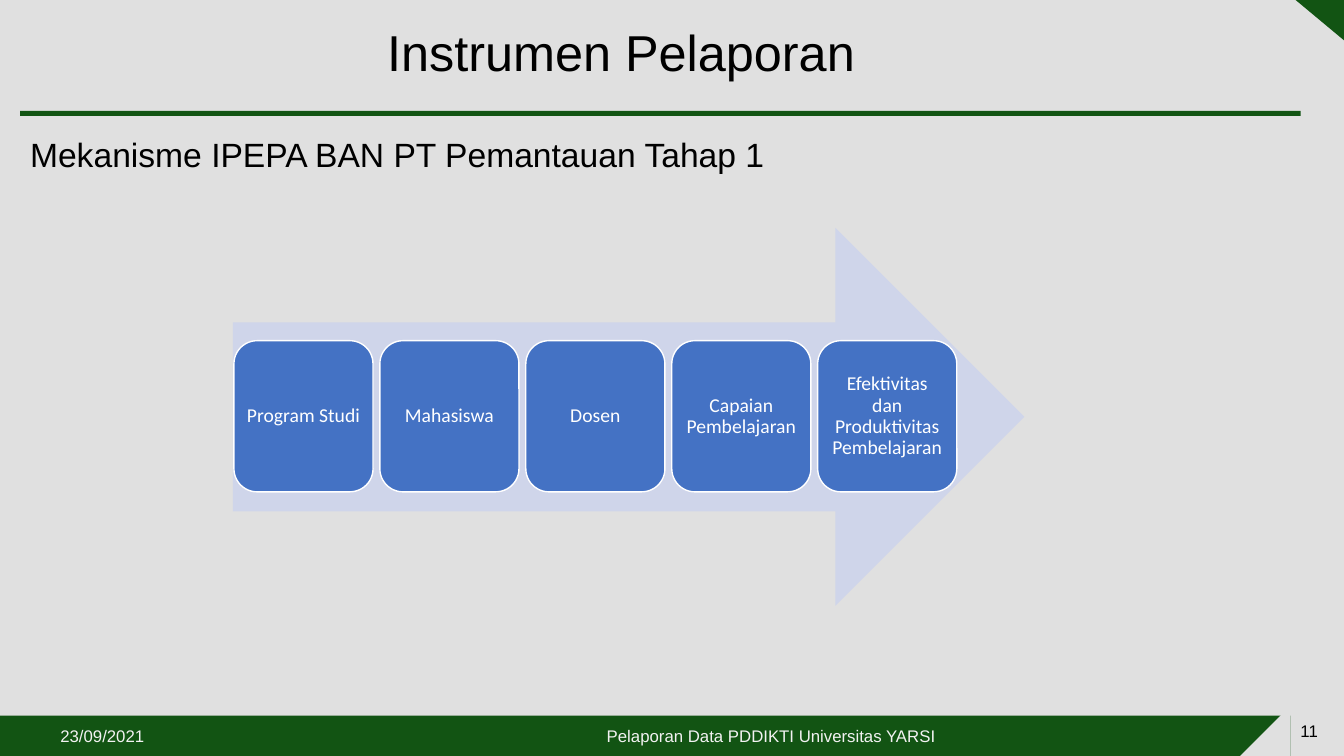
from pptx import Presentation
from pptx.dml.color import RGBColor
from pptx.enum.shapes import MSO_SHAPE
from pptx.enum.text import MSO_ANCHOR, PP_ALIGN
from pptx.util import Inches, Pt

RECT, TRIANGLE = MSO_SHAPE.RECTANGLE, MSO_SHAPE.RIGHT_TRIANGLE
ARROW, ROUNDED = MSO_SHAPE.RIGHT_ARROW, MSO_SHAPE.ROUNDED_RECTANGLE
TOP, MIDDLE = MSO_ANCHOR.TOP, MSO_ANCHOR.MIDDLE
LEFT, CENTER = PP_ALIGN.LEFT, PP_ALIGN.CENTER

COLORS = {
    "background": "E0E0E0",
    "green": "125413",
    "arrow": "CFD5EA",
    "step": "4472C4",
    "white": "FFFFFF",
    "footer": "F2F2F2",
    "black": "000000",
}

TITLE = "Instrumen Pelaporan"
HEADING = "Mekanisme IPEPA BAN PT Pemantauan Tahap 1"
DATE = "23/09/2021"
FOOTER = "Pelaporan Data PDDIKTI Universitas YARSI"
PAGE_NUMBER = "11"
STEPS = [
    "Program Studi",
    "Mahasiswa",
    "Dosen",
    "Capaian Pembelajaran",
    "Efektivitas dan Produktivitas Pembelajaran",
]

SLIDE_W, SLIDE_H = 13.33, 7.5
STEP_LEFT, STEP_TOP, STEP_W, STEP_H = 2.32, 3.38, 1.38, 1.5
STEP_PITCH = 1.4475
STEP_RADIUS = 0.23
STEP_INSET = 0.06

prs = Presentation()
prs.slide_width, prs.slide_height = Inches(SLIDE_W), Inches(SLIDE_H)
s = prs.slides.add_slide(prs.slide_layouts[6])


def rgb(name):
    return RGBColor.from_string(COLORS[name])


def add_shape(kind, box, fill, line=None, rotation=0):
    sp = s.shapes.add_shape(kind, *map(Inches, box))
    sp.shadow.inherit = False
    sp.rotation = rotation
    sp.fill.solid()
    sp.fill.fore_color.rgb = rgb(fill)
    if line:
        sp.line.color.rgb = rgb(line)
        sp.line.width = Pt(1)
    else:
        sp.line.fill.background()
    return sp


def add_text(text, box=None, sp=None, size=12, font="Arial", color="black",
             align=LEFT, anchor=MIDDLE, spacing=1.0, inset=None):
    sp = sp or s.shapes.add_textbox(*map(Inches, box))
    tf = sp.text_frame
    tf.word_wrap = True
    tf.vertical_anchor = anchor
    if inset is not None:
        tf.margin_left = tf.margin_right = Inches(inset)
        tf.margin_top = tf.margin_bottom = Inches(inset)
    p = tf.paragraphs[0]
    p.alignment = align
    p.line_spacing = spacing
    r = p.add_run()
    r.text = text
    r.font.size = Pt(size)
    r.font.name = font
    r.font.color.rgb = rgb(color)


s.background.fill.solid()
s.background.fill.fore_color.rgb = rgb("background")

add_shape(RECT, (0, 7.1, SLIDE_W, 0.4), "green")
add_shape(TRIANGLE, (12.3, 7, 0.5, 0.5), "background", rotation=270)
add_shape(TRIANGLE, (12.85, 0, 0.48, 0.4), "green", rotation=180)
add_shape(RECT, (0.2, 1.1, 12.7, 0.05), "green")

add_text(TITLE, (3.6, 0.1, 5.12, 0.9), size=36, align=CENTER, spacing=0.9)
add_text(DATE, (0.5, 7.2, 2.5, 0.2), color="footer")
add_text(FOOTER, (3.5, 7.2, 8.3, 0.2), color="footer", align=CENTER)
page_box = add_shape(RECT, (12.8, 7, 0.53, 0.5), "background")
add_text(PAGE_NUMBER, sp=page_box)

add_shape(ARROW, (2.31, 2.26, 7.85, 3.75), "arrow")
for i, step in enumerate(STEPS):
    box = (STEP_LEFT + i * STEP_PITCH, STEP_TOP, STEP_W, STEP_H)
    sp = add_shape(ROUNDED, box, "step", line="white")
    sp.adjustments[0] = STEP_RADIUS / STEP_W
    add_text(step, sp=sp, size=14, font="Calibri", color="white",
             align=CENTER, spacing=0.9, inset=STEP_INSET)

add_text(HEADING, (0.2, 1.2, 12.7, 0.6), size=24, anchor=TOP, spacing=1.2)

prs.save("out.pptx")
